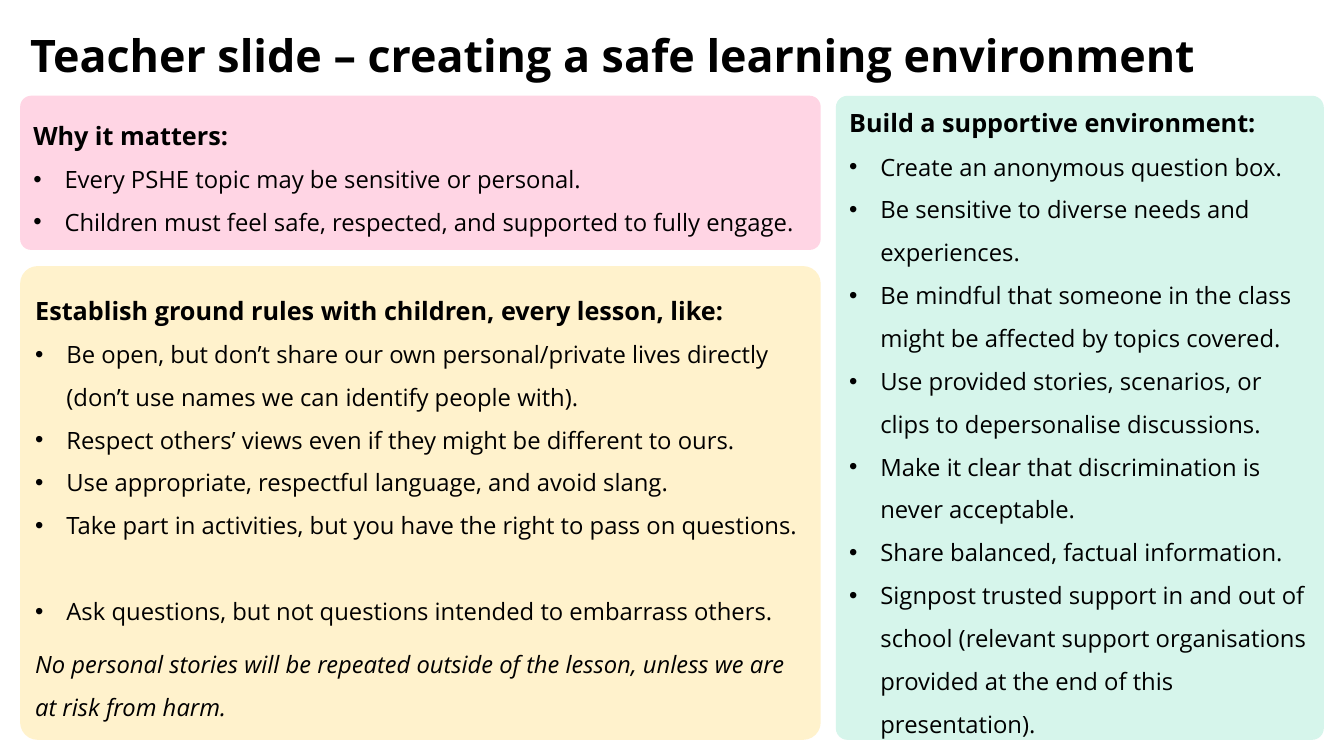
from lxml import etree
from pptx import Presentation
from pptx import util as u
from pptx.dml.color import RGBColor
from pptx.enum import shapes, text
from pptx.oxml import ns

PX = 9144
FONT = "Open Sans"
BLACK = RGBColor(0, 0, 0)
PINK = RGBColor(0xFF, 0xD5, 0xE4)
CREAM = RGBColor(0xFF, 0xF2, 0xCC)
MINT = RGBColor(0xD6, 0xF5, 0xEB)

WHY = [
    "Every PSHE topic may be sensitive or personal.",
    "Children must feel safe, respected, and supported to fully engage.",
]
RULES = [
    "Be open, but don’t share our own personal/private lives directly "
    "(don’t use names we can identify people with).",
    "Respect others’ views even if they might be different to ours.",
    "Use appropriate, respectful language, and avoid slang.",
    "Take part in activities, but you have the right to pass on questions.",
    "Ask questions, but not questions intended to embarrass others.",
]
NOTE = ("No personal stories will be repeated outside of the lesson, "
        "unless we are at risk from harm.")
BUILD = [
    "Create an anonymous question box.",
    "Be sensitive to diverse needs and experiences.",
    "Be mindful that someone in the class might be affected by topics covered.",
    "Use provided stories, scenarios, or clips to depersonalise discussions.",
    "Make it clear that discrimination is never acceptable.",
    "Share balanced, factual information.",
    "Signpost trusted support in and out of school (relevant support "
    "organisations provided at the end of this presentation).",
]


def scale(box):
    return [n * PX for n in box]


def add_run(para, words, size, bold=False, slant=False):
    run = para.add_run()
    run.text = words
    font = run.font
    font.name, font.size = FONT, u.Pt(size)
    font.bold, font.italic = bold, slant
    font.color.rgb = BLACK


def add_dot(para):
    props = para._p.get_or_add_pPr()
    props.set("marL", str(31 * PX))
    props.set("indent", str(-31 * PX))
    face = etree.SubElement(props, ns.qn("a:buFont"))
    face.set("typeface", "Arial")
    etree.SubElement(props, ns.qn("a:buChar")).set("char", "•")


def add_title(slide, box, words):
    title = slide.shapes.title
    title.left, title.top, title.width, title.height = scale(box)
    frame = title.text_frame
    frame.word_wrap = True
    frame.auto_size = text.MSO_AUTO_SIZE.NONE
    frame.vertical_anchor = text.MSO_ANCHOR.MIDDLE
    para = frame.paragraphs[0]
    para.alignment = text.PP_ALIGN.LEFT
    para.line_spacing = 1.07
    para.space_after = u.Pt(8)
    add_run(para, words, 32, bold=True)


def add_card(slide, box, fill, round_by, head, items, note=None, gaps={}):
    card = slide.shapes.add_shape(
        shapes.MSO_SHAPE.ROUNDED_RECTANGLE, *scale(box))
    card.adjustments[0] = round_by
    card.shadow.inherit = False
    card.fill.solid()
    card.fill.fore_color.rgb = fill
    card.line.fill.background()
    frame = card.text_frame
    frame.word_wrap = True
    frame.vertical_anchor = text.MSO_ANCHOR.MIDDLE
    frame.margin_left = frame.margin_right = 10 * PX
    frame.margin_top, frame.margin_bottom = 0, 5 * PX

    def add_para(first=False, dot=False, gap=0):
        para = frame.paragraphs[0] if first else frame.add_paragraph()
        if dot:
            add_dot(para)
        para.alignment = text.PP_ALIGN.LEFT
        para.line_spacing = 1.5
        if gap:
            para.space_before = u.Pt(gap)
        return para

    add_run(add_para(first=True), head, 18, bold=True)
    for spot, item in enumerate(items):
        add_run(add_para(dot=True, gap=gaps.get(spot, 0)), item, 17)
    if note:
        add_run(add_para(gap=7.2), note, 17, slant=True)


def main():
    deck = Presentation()
    deck.slide_width, deck.slide_height = 1333 * PX, 750 * PX
    slide = deck.slides.add_slide(deck.slide_layouts[5])
    add_title(slide, (20, 16, 1249, 73),
              "Teacher slide – creating a safe learning environment")
    add_card(slide, (20, 95, 794, 153), PINK, 0.072, "Why it matters:", WHY)
    add_card(slide, (20, 264, 794, 470), CREAM, 0.037,
             "Establish ground rules with children, every lesson, like:",
             RULES, NOTE, {4: 30.6})
    add_card(slide, (829, 95, 484, 639), MINT, 0.024,
             "Build a supportive environment:", BUILD)
    deck.save("out.pptx")


if __name__ == "__main__":
    main()
